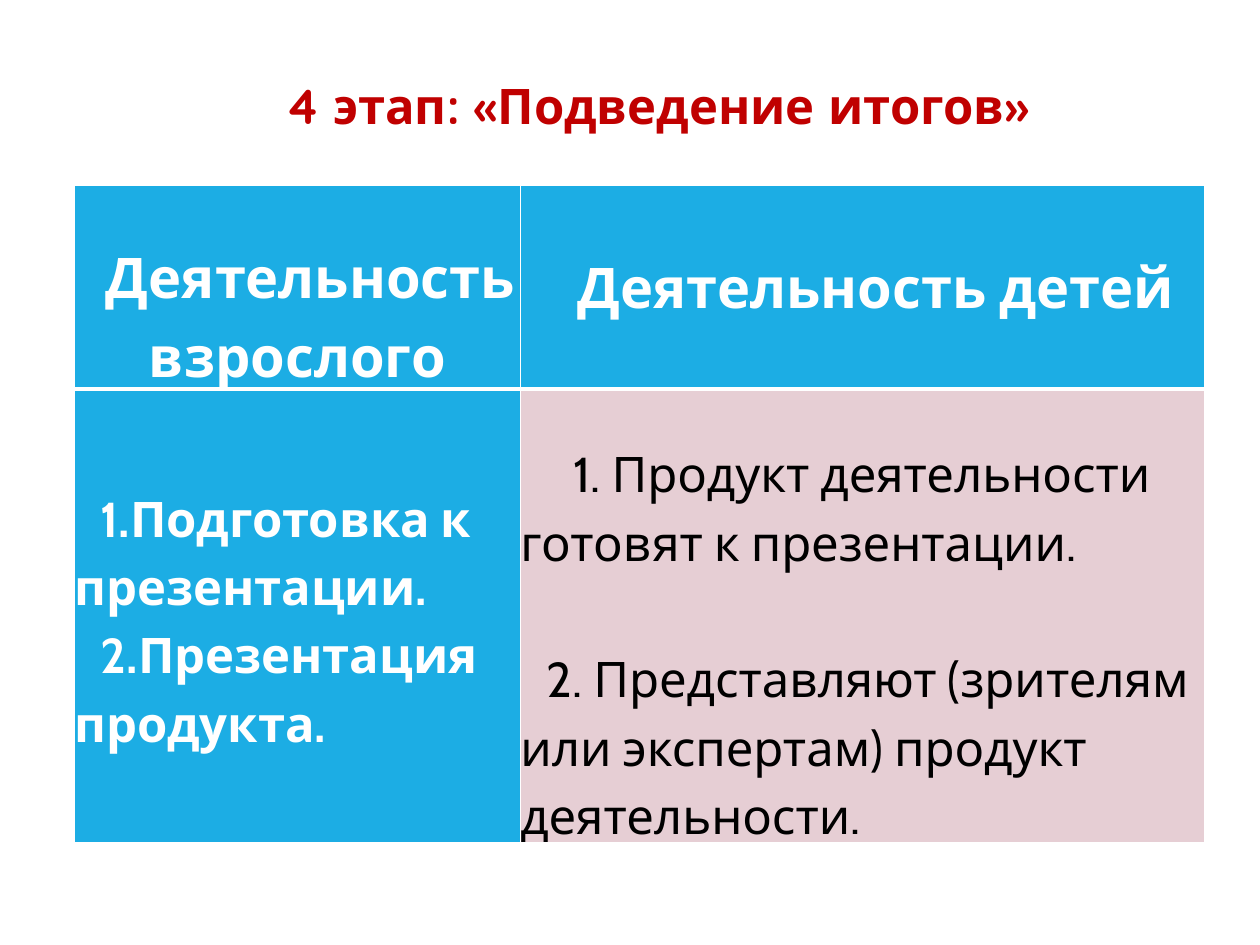
from lxml import etree
from pptx import Presentation
from pptx.dml.color import RGBColor
from pptx.enum import text
from pptx.oxml.ns import qn
from pptx.util import Inches, Pt

# Content
TITLE = "4 этап: «Подведение итогов»"
WHITE, BLACK, RED, BLUE, PINK = "FFFFFF", "000000", "C00000", "1CADE4", "E6CED4"
COLS, ROWS = (3.54, 5.43), (1.57, 3.57)
INDENT = 0.21
CENTER, LEFT = text.PP_ALIGN.CENTER, text.PP_ALIGN.LEFT

# Cells: fill, font colour, bold, top margin, paragraphs (text, indent, space before)
CELLS = [
    [(BLUE, WHITE, True, 0.39, [("Деятельность взрослого", INDENT, 0)]),
     (BLUE, WHITE, True, 0.47, [("Деятельность детей", INDENT, 0)])],
    [(BLUE, WHITE, True, 0.73, [("1.Подготовка к презентации.", INDENT, 0),
                                ("2.Презентация продукта.", INDENT, 0)]),
     (PINK, BLACK, False, 0.38,
      [("1. Продукт деятельности готовят к презентации.", 2 * INDENT, 0),
       ("2. Представляют (зрителям или экспертам) продукт деятельности.", INDENT, 39)])],
]


def rgb(value):
    return RGBColor.from_string(value)


def add_run(p, words, font, size, color, bold):
    r = p.add_run()
    r.text = words
    r.font.name, r.font.size, r.font.bold = font, Pt(size), bold
    r.font.color.rgb = rgb(color)


def set_borders(cell, widths):
    tc_pr = cell._tc.get_or_add_tcPr()
    for i, (side, width) in enumerate(widths.items()):
        ln = etree.Element(qn(f"a:ln{side}"), w=str(Pt(width)))
        fill = etree.SubElement(ln, qn("a:solidFill"))
        etree.SubElement(fill, qn("a:srgbClr"), val=WHITE)
        tc_pr.insert(i, ln)


prs = Presentation()
prs.slide_width, prs.slide_height = Inches(10), Inches(7.5)
slide = prs.slides.add_slide(prs.slide_layouts[6])

# Title
sp = slide.shapes.add_textbox(Inches(2.01), Inches(0.6), Inches(6.41), Inches(0.53))
tf = sp.text_frame
tf.word_wrap = True
tf.vertical_anchor = text.MSO_ANCHOR.MIDDLE
p = tf.paragraphs[0]
p.alignment, p.line_spacing = CENTER, 0.9
add_run(p, TITLE, "Quicksand", 28, RED, True)

# Table
table = slide.shapes.add_table(len(ROWS), len(COLS), Inches(0.59), Inches(1.47),
                               Inches(sum(COLS)), Inches(sum(ROWS))).table
table.horz_banding = False
for column, width in zip(table.columns, COLS):
    column.width = Inches(width)
for row, height in zip(table.rows, ROWS):
    row.height = Inches(height)

for i, row in enumerate(CELLS):
    header = i == 0
    for j, (fill, color, bold, top, paragraphs) in enumerate(row):
        cell = table.cell(i, j)
        cell.margin_left = cell.margin_right = cell.margin_bottom = 0
        cell.margin_top = Inches(top)
        cell.fill.solid()
        cell.fill.fore_color.rgb = rgb(fill)
        set_borders(cell, {"L": 1, "R": 1, "T": 1 if header else 3, "B": 3 if header else 1})
        tf = cell.text_frame
        for n, (words, indent, before) in enumerate(paragraphs):
            p = tf.add_paragraph() if n else tf.paragraphs[0]
            p.alignment, p.line_spacing = CENTER if header else LEFT, 1.15
            if before:
                p.space_before = Pt(before)
            p_pr = p._p.get_or_add_pPr()
            p_pr.set("marL", "0")
            p_pr.set("indent", str(Inches(indent)))
            add_run(p, words, "Cabin", 32 if header else 28, color, bold)

prs.save("out.pptx")
